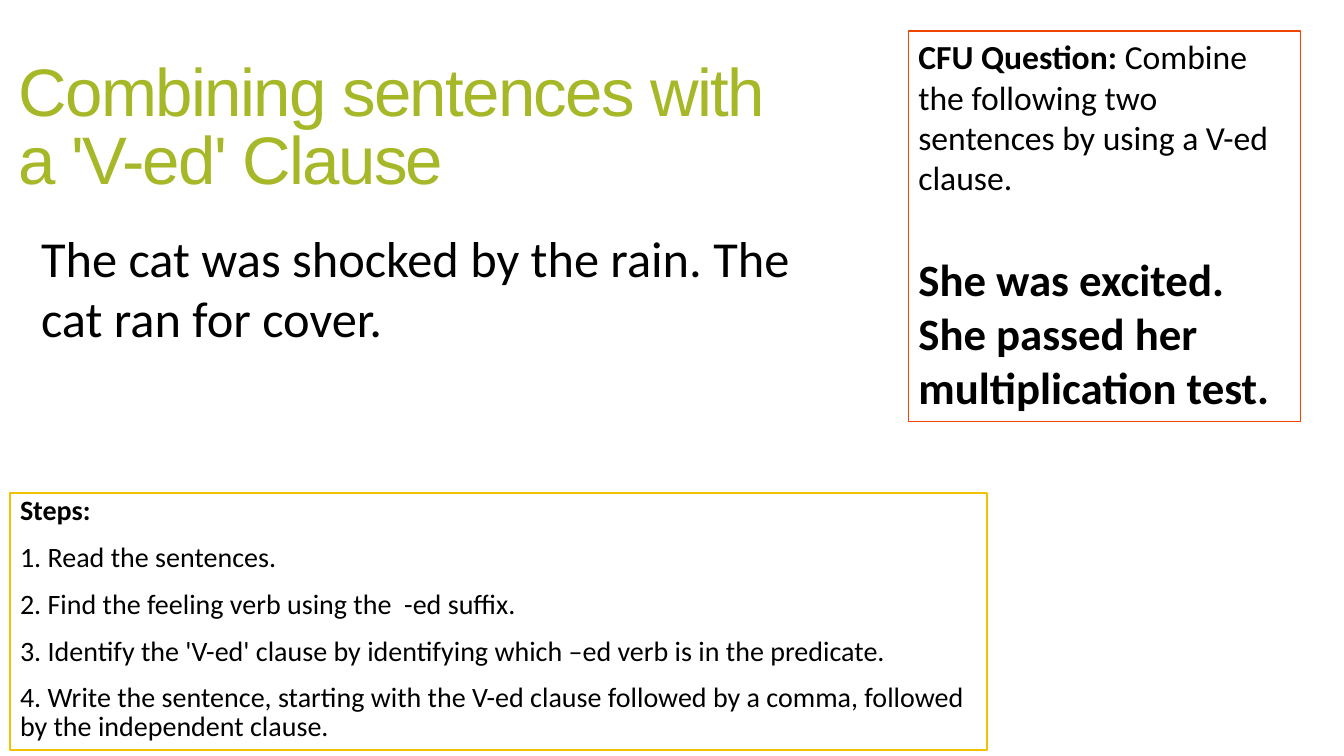
import pptx
import pptx.dml.color
import pptx.enum.shapes
import pptx.enum.text
import pptx.util

Inches = pptx.util.Inches
Pt = pptx.util.Pt
RGBColor = pptx.dml.color.RGBColor

GREEN = RGBColor(0xA6, 0xB7, 0x27)
YELLOW = RGBColor(0xF2, 0xC1, 0x00)
ORANGE = RGBColor(0xF0, 0x43, 0x04)
BLACK = RGBColor(0, 0, 0)
WHITE = RGBColor(0xFF, 0xFF, 0xFF)

STEPS = [
    "Steps:",
    "1. Read the sentences.",
    "2. Find the feeling verb using the  -ed suffix.",
    "3. Identify the 'V-ed' clause by identifying which –ed verb is in the predicate.",
    "4. Write the sentence, starting with the V-ed clause followed by a comma, "
    "followed by the independent clause.",
]


def add_text_area(slide, box):
    tf = slide.shapes.add_textbox(*map(Inches, box)).text_frame
    tf.word_wrap = True
    return tf


def add_panel(slide, box, line_color):
    sp = slide.shapes.add_shape(
        pptx.enum.shapes.MSO_SHAPE.RECTANGLE, *map(Inches, box))
    sp.shadow.inherit = False
    sp.fill.solid()
    sp.fill.fore_color.rgb = WHITE
    sp.line.color.rgb = line_color
    sp.line.width = Pt(1)
    tf = sp.text_frame
    tf.word_wrap = True
    tf.vertical_anchor = pptx.enum.text.MSO_ANCHOR.TOP
    return tf


def style(p, size, color=BLACK, name="Calibri", bold=None):
    p.alignment = pptx.enum.text.PP_ALIGN.LEFT
    p.font.size = Pt(size)
    p.font.name = name
    p.font.color.rgb = color
    p.font.bold = bold


def add_title(slide, box):
    tf = add_text_area(slide, box)
    tf.vertical_anchor = pptx.enum.text.MSO_ANCHOR.MIDDLE
    p = tf.paragraphs[0]
    style(p, 48, GREEN, "Arial")
    p.line_spacing = 0.85
    r = p.add_run()
    r.text = "Combining sentences with a 'V-ed' Clause"
    r._r.get_or_add_rPr().set("spc", "-120")


def add_example(slide, box):
    p = add_text_area(slide, box).paragraphs[0]
    p.text = "The cat was shocked by the rain. The cat ran for cover."
    style(p, 36)


def add_steps(slide, box):
    tf = add_panel(slide, box, YELLOW)
    tf.text = "\n".join(STEPS)
    for i, p in enumerate(tf.paragraphs):
        style(p, 20, bold=i == 0)
        p.line_spacing = 0.85
        p.space_before = Pt(13)


def add_question(slide, box):
    tf = add_panel(slide, box, ORANGE)
    p = tf.paragraphs[0]
    style(p, 24)
    r = p.add_run()
    r.text = "CFU Question: "
    r.font.bold = True
    r = p.add_run()
    r.text = "Combine the following two sentences by using a V-ed clause."
    p = tf.add_paragraph()
    p.text = "She was excited. She passed her multiplication test."
    style(p, 32, bold=True)
    p.space_before = Pt(39)


def main():
    prs = pptx.Presentation()
    prs.slide_width = Inches(13.33)
    prs.slide_height = Inches(7.5)
    slide = prs.slides.add_slide(prs.slide_layouts[6])
    add_title(slide, (0.09, -0.08, 7.67, 2.74))
    add_steps(slide, (0.1, 4.89, 9.69, 2.55))
    add_example(slide, (0.31, 2.2, 7.87, 1.31))
    add_question(slide, (9.01, 0.31, 3.89, 3.87))
    prs.save("out.pptx")


if __name__ == "__main__":
    main()
